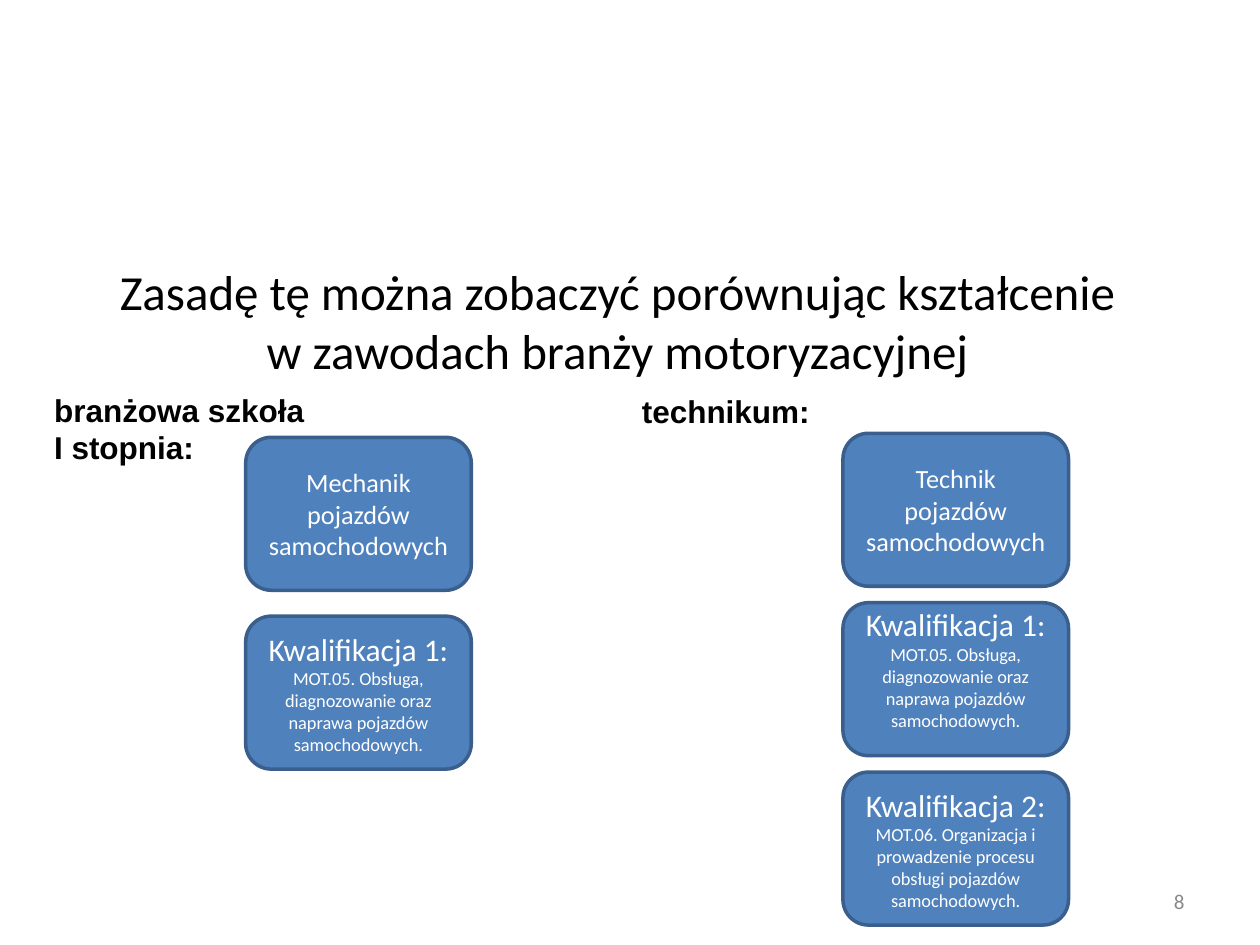
import pptx
import pptx.util
import pptx.dml.color
import pptx.enum.shapes
import pptx.enum.text

Pt = pptx.util.Pt
Align = pptx.enum.text.PP_ALIGN
Anchor = pptx.enum.text.MSO_ANCHOR
BLACK = pptx.dml.color.RGBColor(0x00, 0x00, 0x00)
WHITE = pptx.dml.color.RGBColor(0xFF, 0xFF, 0xFF)
GRAY = pptx.dml.color.RGBColor(0x89, 0x89, 0x89)
BLUE = pptx.dml.color.RGBColor(0x4F, 0x81, 0xBD)
DARK_BLUE = pptx.dml.color.RGBColor(0x3A, 0x5F, 0x8C)


def write(box, text, sizes, font="Calibri", color=BLACK, bold=False,
          align=Align.CENTER, anchor=Anchor.MIDDLE):
    frame = box.text_frame
    frame.word_wrap = True
    frame.vertical_anchor = anchor
    frame.text = text
    for para, size in zip(frame.paragraphs, sizes):
        para.alignment = align
        for span in para.runs:
            span.font.name = font
            span.font.size = Pt(size)
            span.font.bold = bold
            span.font.color.rgb = color


deck = pptx.Presentation()
deck.slide_width = Pt(720)
deck.slide_height = Pt(540)
page = deck.slides.add_slide(deck.slide_layouts[6])

title = page.shapes.add_textbox(Pt(28.8), Pt(138.2), Pt(648), Pt(90))
write(title, "Zasadę tę można zobaczyć porównując kształcenie\v"
             "w zawodach branży motoryzacyjnej", [28])

headings = [
    ("branżowa szkoła I stopnia:", 23.8, 219.6, 166.3, 51, Align.LEFT),
    ("technikum:", 347.8, 220.3, 133.9, 29, Align.CENTER),
]
for text, left, top, width, height, align in headings:
    heading = page.shapes.add_textbox(Pt(left), Pt(top), Pt(width), Pt(height))
    write(heading, text, [18], font="Arial", bold=True, align=align, anchor=Anchor.TOP)

repair = "Kwalifikacja 1:\nMOT.05. Obsługa, diagnozowanie oraz naprawa pojazdów samochodowych."
management = ("Kwalifikacja 2:\nMOT.06. Organizacja i prowadzenie procesu "
              "obsługi pojazdów samochodowych.")
job_sizes = [15]
qualification_sizes = [18, 10.5]
schools = [
    (140.4, 249.9, 102.2, [
        ("Mechanik pojazdów samochodowych", job_sizes, 3.6),
        (repair, qualification_sizes, 3.6),
    ]),
    (481.7, 247.6, 96.8, [
        ("Technik pojazdów samochodowych", job_sizes, 3.6),
        (repair, qualification_sizes, 16.4),
        (management, qualification_sizes, 3.6),
    ]),
]
for left, top, step, cards in schools:
    for row, (text, sizes, bottom_margin) in enumerate(cards):
        card = page.shapes.add_shape(
            pptx.enum.shapes.MSO_SHAPE.ROUNDED_RECTANGLE,
            Pt(left), Pt(top + row * step), Pt(128.9), Pt(87.4))
        card.shadow.inherit = False
        card.fill.solid()
        card.fill.fore_color.rgb = BLUE
        card.line.color.rgb = DARK_BLUE
        card.line.width = Pt(2)
        write(card, text, sizes, color=WHITE)
        card.text_frame.margin_bottom = Pt(bottom_margin)

number = page.shapes.add_textbox(Pt(516), Pt(500.5), Pt(168), Pt(28.8))
write(number, "8", [12], color=GRAY, align=Align.RIGHT)

deck.save("out.pptx")
